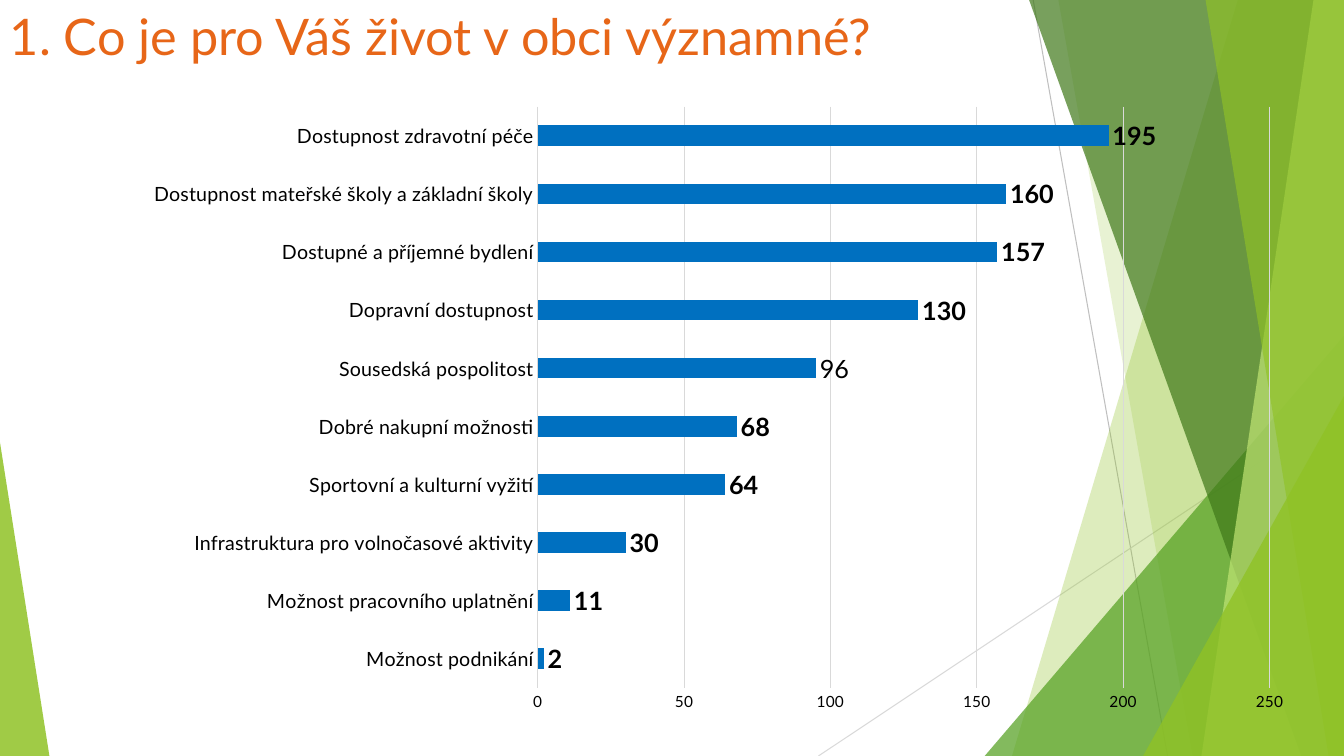
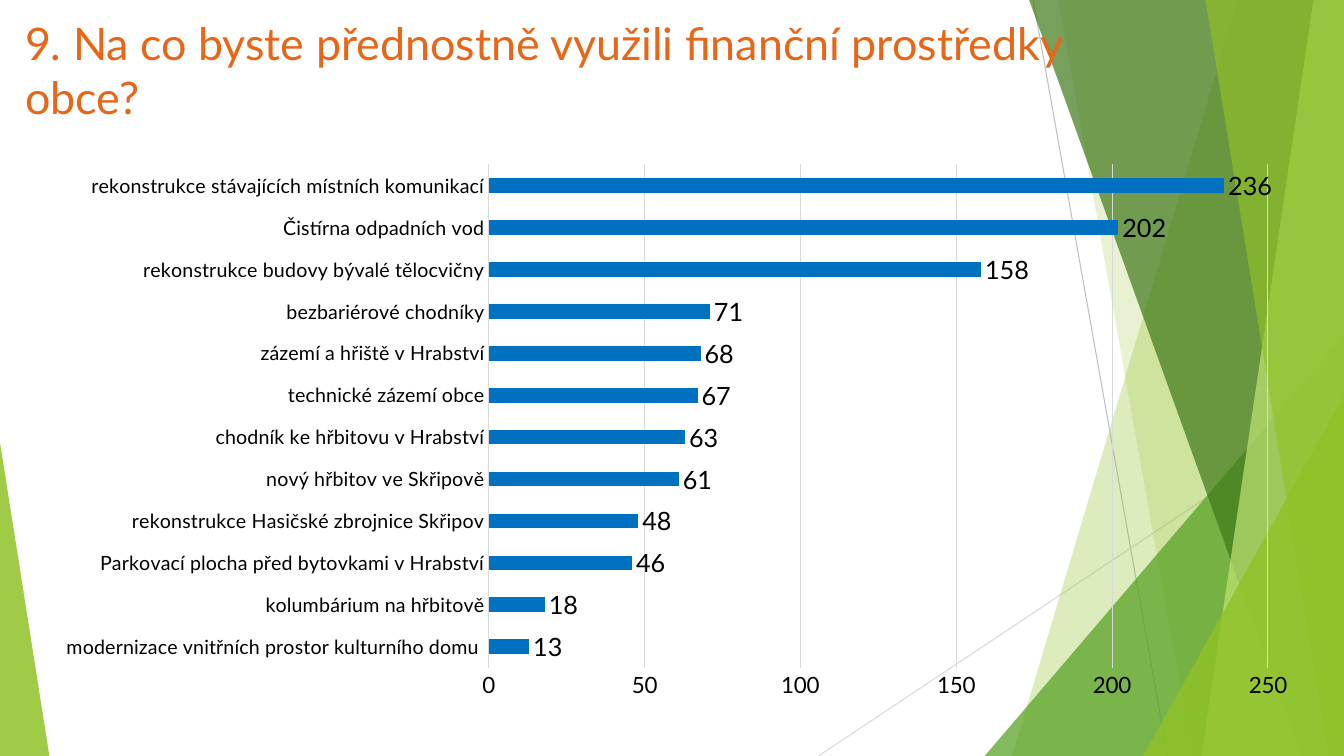
from dataclasses import dataclass, field

from lxml import etree
from pptx import Presentation
from pptx.chart.data import CategoryChartData
from pptx.dml.color import RGBColor
from pptx.enum.chart import XL_CHART_TYPE, XL_LABEL_POSITION, XL_TICK_MARK
from pptx.enum.shapes import MSO_CONNECTOR, MSO_SHAPE
from pptx.enum.text import MSO_ANCHOR
from pptx.oxml.ns import qn
from pptx.util import Pt

BAR_CHART = XL_CHART_TYPE.BAR_CLUSTERED
OUTSIDE_END = XL_LABEL_POSITION.OUTSIDE_END
NO_TICK = XL_TICK_MARK.NONE
STRAIGHT = MSO_CONNECTOR.STRAIGHT
TRIANGLE = MSO_SHAPE.ISOSCELES_TRIANGLE
TOP = MSO_ANCHOR.TOP

WIDTH, HEIGHT = 960, 540
FONT = "Lato"
COLORS = {
    "title": "E76618", "text": "000000", "bar": "0070C0",
    "grid": "D9D9D9", "thin_line": "BFBFBF",
    "lime": "90C226", "green": "54A021", "dark_green": "3F7819",
    "pale_lime": "C0E474",
}


@dataclass(frozen=True)
class Band:
    """Slanted band that reaches the right edge of the slide."""
    top_x: float
    bottom_x: float
    color: str
    opacity: int


@dataclass(frozen=True)
class Wedge:
    """Triangle standing on the bottom edge, apex 0 = left, 1 = right."""
    left: float
    top: float
    width: float
    apex: int
    color: str
    opacity: int


@dataclass(frozen=True)
class Ray:
    start: tuple[float, float]
    end: tuple[float, float]
    color: str


@dataclass(frozen=True)
class Question:
    title: str
    title_box: tuple[float, float, float, float]
    title_size: float
    chart_box: tuple[float, float, float, float]
    plot: tuple[float, float, float, float]
    scale_size: float
    bold_values: bool
    answers: list[tuple[str, int]]  # from the bottom bar to the top bar
    value_texts: dict[int, str] = field(default_factory=dict)


DECORATION = [
    Ray((738, 0), (834, HEIGHT), "thin_line"),
    Ray((WIDTH, 290), (584.6, HEIGHT), "grid"),
    Band(884.2, 722.9, "lime", 30),
    Band(756, 851.8, "lime", 20),
    Wedge(703.4, 239.8, 256.6, 1, "green", 72),
    Band(735.1, 929.5, "dark_green", 70),
    Band(938.2, 858.2, "pale_lime", 70),
    Band(861.1, 949, "lime", 65),
    Wedge(816.5, 283, 143.5, 1, "lime", 80),
    Wedge(0, 316.1, 35.3, 0, "lime", 85),
]

QUESTIONS = [
    Question(
        "1. Co je pro Váš život v obci významné?",
        (0, 0, 688.3, 64.8), 36,
        (42.5, 64.8, 892, 457.2), (0.383, 0.025, 0.586, 0.908), 11, True,
        [
            ("Možnost podnikání", 2),
            ("Možnost pracovního uplatnění", 11),
            ("Infrastruktura pro volnočasové aktivity", 30),
            ("Sportovní a kulturní vyžití", 64),
            ("Dobré nakupní možnosti", 68),
            ("Sousedská pospolitost", 95),
            ("Dopravní dostupnost", 130),
            ("Dostupné a příjemné bydlení", 157),
            ("Dostupnost mateřské školy a základní školy", 160),
            ("Dostupnost zdravotní péče", 195),
        ],
        {5: "96"},
    ),
    Question(
        "9. Na co byste přednostně využili finanční prostředky obce?",
        (10.8, 7.9, 773.3, 101.5), 32,
        (29.5, 109.4, 908, 396.7), (0.352, 0.02, 0.613, 0.907), 16, False,
        [
            ("modernizace vnitřních prostor kulturního domu ", 13),
            ("kolumbárium na hřbitově", 18),
            ("Parkovací plocha před bytovkami v Hrabství", 46),
            ("rekonstrukce Hasičské zbrojnice Skřipov", 48),
            ("nový hřbitov ve Skřipově", 61),
            ("chodník ke hřbitovu v Hrabství", 63),
            ("technické zázemí obce", 67),
            ("zázemí a hřiště v Hrabství", 68),
            ("bezbariérové chodníky", 71),
            ("rekonstrukce budovy bývalé tělocvičny", 158),
            ("Čistírna odpadních vod", 202),
            ("rekonstrukce stávajících místních komunikací", 236),
        ],
    ),
]


def rgb(color: str) -> RGBColor:
    return RGBColor.from_string(COLORS[color])


def set_font(font, size: float, color: str = "text", bold: bool = False) -> None:
    font.name = FONT
    font.size = Pt(size)
    font.bold = bold
    font.color.rgb = rgb(color)


def write_text(frame, text: str, **font_format) -> None:
    run = frame.paragraphs[0].add_run()
    run.text = text
    set_font(run.font, **font_format)


# Background decoration
def paint(shape, color: str, opacity: int) -> None:
    shape.shadow.inherit = False
    shape.line.fill.background()
    shape.fill.solid()
    shape.fill.fore_color.rgb = rgb(color)
    tint = shape.element.spPr.find(f".//{qn('a:srgbClr')}")
    etree.SubElement(tint, qn("a:alpha"), val=str(opacity * 1000))


def draw_ray(slide, ray: Ray) -> None:
    points = [Pt(value) for value in (*ray.start, *ray.end)]
    line = slide.shapes.add_connector(STRAIGHT, *points)
    line.line.color.rgb = rgb(ray.color)
    line.line.width = Pt(0.75)
    etree.SubElement(line.element.spPr, qn("a:effectLst"))


def draw_band(slide, band: Band) -> None:
    outline = slide.shapes.build_freeform(Pt(band.top_x), 0)
    corners = [(WIDTH, 0), (WIDTH, HEIGHT), (band.bottom_x, HEIGHT)]
    outline.add_line_segments([(Pt(x), Pt(y)) for x, y in corners], close=True)
    paint(outline.convert_to_shape(), band.color, band.opacity)


def draw_wedge(slide, wedge: Wedge) -> None:
    triangle = slide.shapes.add_shape(
        TRIANGLE, Pt(wedge.left), Pt(wedge.top),
        Pt(wedge.width), Pt(HEIGHT - wedge.top))
    triangle.adjustments[0] = wedge.apex
    paint(triangle, wedge.color, wedge.opacity)


DRAWERS = {Ray: draw_ray, Band: draw_band, Wedge: draw_wedge}


def draw_decoration(slide) -> None:
    for part in DECORATION:
        DRAWERS[type(part)](slide, part)


# Question and its answers
def draw_title(slide, question: Question) -> None:
    box = slide.shapes.add_textbox(*map(Pt, question.title_box))
    frame = box.text_frame
    frame.word_wrap = True
    frame.vertical_anchor = TOP
    write_text(frame, question.title, size=question.title_size, color="title")


def place_plot(chart, plot: tuple[float, float, float, float]) -> None:
    area = chart.element.find(f".//{qn('c:plotArea')}")
    for old_layout in area.findall(qn("c:layout")):
        area.remove(old_layout)
    layout = etree.Element(qn("c:layout"))
    manual = etree.SubElement(layout, qn("c:manualLayout"))
    settings = [("layoutTarget", "inner"), ("xMode", "edge"), ("yMode", "edge")]
    settings += zip("xywh", map(str, plot))
    for tag, value in settings:
        etree.SubElement(manual, qn(f"c:{tag}"), val=value)
    area.insert(0, layout)


def style_axes(chart, scale_size: float) -> None:
    answers, scale = chart.category_axis, chart.value_axis
    for axis, size in ((answers, 14), (scale, scale_size)):
        axis.major_tick_mark = axis.minor_tick_mark = NO_TICK
        set_font(axis.tick_labels.font, size)
    scale.minimum_scale, scale.maximum_scale, scale.major_unit = 0, 250, 50
    scale.has_major_gridlines = True
    scale.format.line.fill.background()
    for line in (answers.format.line, scale.major_gridlines.format.line):
        line.color.rgb = rgb("grid")
        line.width = Pt(0.75)


def draw_chart(slide, question: Question) -> None:
    names, counts = zip(*question.answers)
    data = CategoryChartData()
    data.categories = names
    data.add_series("Series 1", counts)
    frame = slide.shapes.add_chart(BAR_CHART, *map(Pt, question.chart_box), data)
    chart = frame.chart
    chart.has_title = chart.has_legend = False
    set_font(chart.font, 10)
    place_plot(chart, question.plot)
    style_axes(chart, question.scale_size)

    bars = chart.plots[0]
    bars.gap_width = 182
    bars.vary_by_categories = False
    series = bars.series[0]
    series.format.fill.solid()
    series.format.fill.fore_color.rgb = rgb("bar")

    values = series.data_labels
    values.show_value = True
    values.position = OUTSIDE_END
    set_font(values.font, 18, bold=question.bold_values)
    for index, text in question.value_texts.items():
        label = series.points[index].data_label
        write_text(label.text_frame, text, size=18)
        label.position = OUTSIDE_END


def main() -> None:
    deck = Presentation()
    deck.slide_width, deck.slide_height = Pt(WIDTH), Pt(HEIGHT)
    blank = deck.slide_layouts[6]
    for question in QUESTIONS:
        slide = deck.slides.add_slide(blank)
        draw_decoration(slide)
        draw_title(slide, question)
        draw_chart(slide, question)
    deck.save("out.pptx")


if __name__ == "__main__":
    main()
